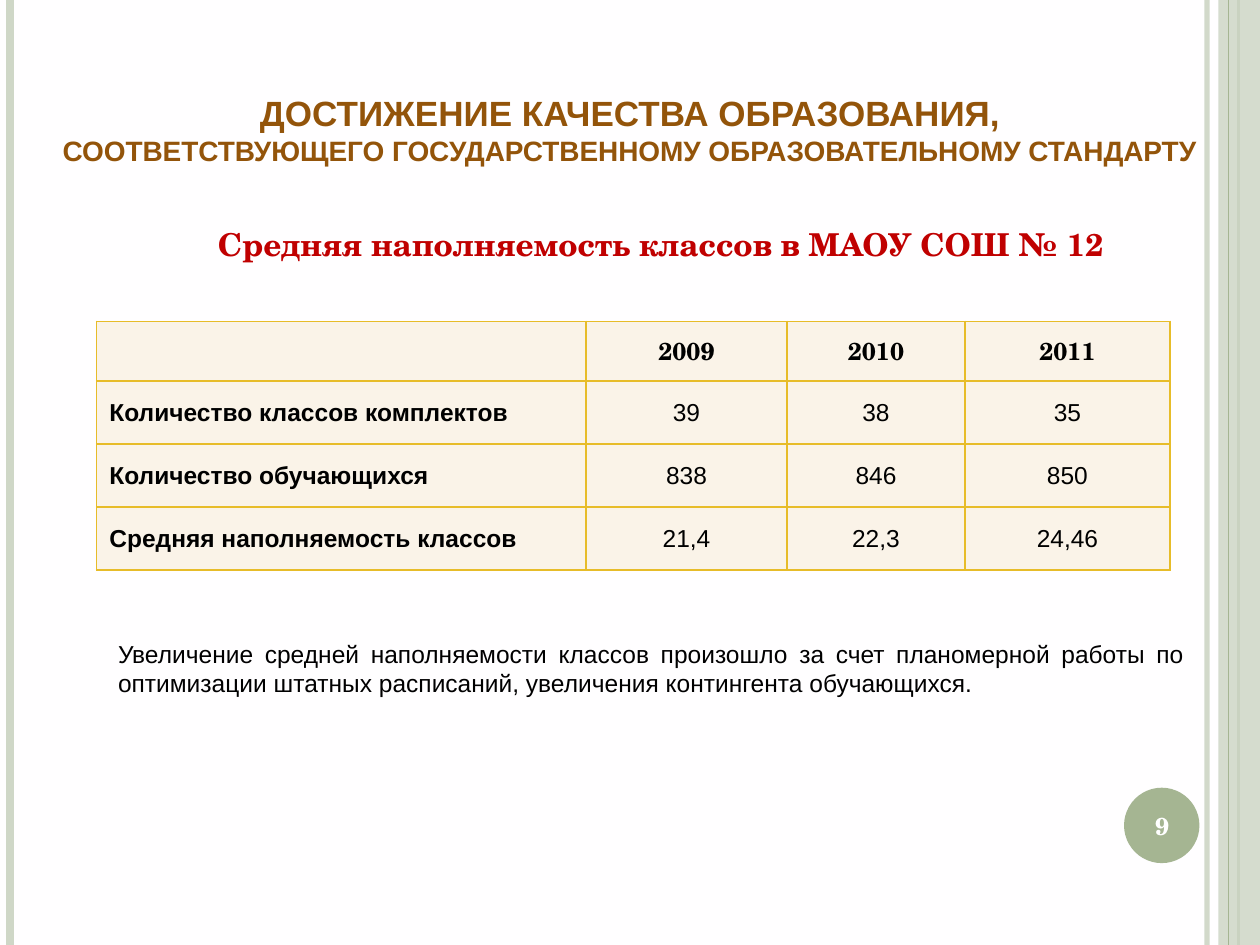
from dataclasses import dataclass

from lxml import etree
from pptx import Presentation
from pptx.dml.color import RGBColor
from pptx.enum.shapes import MSO_CONNECTOR, MSO_SHAPE
from pptx.enum.text import MSO_ANCHOR, PP_ALIGN
from pptx.oxml.ns import qn
from pptx.util import Cm, Pt

STRAIGHT = MSO_CONNECTOR.STRAIGHT
RECTANGLE, OVAL = MSO_SHAPE.RECTANGLE, MSO_SHAPE.OVAL
TOP, MIDDLE = MSO_ANCHOR.TOP, MSO_ANCHOR.MIDDLE
LEFT, CENTER, JUSTIFY = PP_ALIGN.LEFT, PP_ALIGN.CENTER, PP_ALIGN.JUSTIFY
SLIDE_WIDTH, SLIDE_HEIGHT = 25.4, 19.05


@dataclass(frozen=True)
class Theme:
    paper: str = "FFFEFF"
    pale_green: str = "CFD7C7"
    green: str = "A5B592"
    gold: str = "E7BC29"
    cream: str = "FAF3E8"
    brown: str = "93540A"
    red: str = "C00000"
    black: str = "000000"
    white: str = "FFFFFF"
    sans: str = "Arial"
    serif: str = "TeX Gyre Schola"
    title_size: float = 20
    subtitle_size: float = 16
    heading_size: float = 18
    body_size: float = 14


def set_alpha(color_parent, percent):
    color = next(color_parent.iter(qn("a:srgbClr")))
    etree.SubElement(color, qn("a:alpha")).set("val", str(percent * 1000))


class SlideBuilder:
    def __init__(self, slide, theme):
        self.slide = slide
        self.theme = theme
        background = slide.background.fill
        background.solid()
        background.fore_color.rgb = RGBColor.from_string(theme.paper)

    def style(self, para, sizes, color, font, bold=False, align=CENTER):
        """Format the paragraph, giving each run its own size in turn."""
        para.alignment = align
        for span, size in zip(para.runs, sizes):
            span.font.size = Pt(size)
            span.font.name = font
            span.font.bold = bold
            span.font.color.rgb = RGBColor.from_string(color)

    def stripe(self, x, color, width, opacity=100):
        """Draw a full-height vertical line."""
        line = self.slide.shapes.add_connector(
            STRAIGHT, Cm(x), Cm(0), Cm(x), Cm(SLIDE_HEIGHT))
        line.line.width = Pt(width)
        line.line.color.rgb = RGBColor.from_string(color)
        properties = line._element.spPr
        if opacity < 100:
            set_alpha(properties, opacity)
        etree.SubElement(properties, qn("a:effectLst"))

    def shape(self, kind, left, top, width, height, color, opacity=100):
        shape = self.slide.shapes.add_shape(
            kind, Cm(left), Cm(top), Cm(width), Cm(height))
        shape.shadow.inherit = False
        shape.line.fill.background()
        shape.fill.solid()
        shape.fill.fore_color.rgb = RGBColor.from_string(color)
        if opacity < 100:
            set_alpha(shape._element.spPr, opacity)

    def text(self, left, top, width, height, words, sizes, color, font,
             bold=False, align=CENTER, anchor=TOP, fill=None):
        box = self.slide.shapes.add_textbox(
            Cm(left), Cm(top), Cm(width), Cm(height))
        if fill:
            box.fill.solid()
            box.fill.fore_color.rgb = RGBColor.from_string(fill)
        frame = box.text_frame
        frame.word_wrap = True
        frame.vertical_anchor = anchor
        frame.text = words
        self.style(frame.paragraphs[0], sizes, color, font, bold, align)

    def border(self, cell):
        properties = cell._tc.get_or_add_tcPr()
        for side in ("lnL", "lnR", "lnT", "lnB"):
            line = etree.SubElement(properties, qn(f"a:{side}"), w=str(Pt(1)))
            fill = etree.SubElement(line, qn("a:solidFill"))
            etree.SubElement(fill, qn("a:srgbClr"), val=self.theme.gold)

    def table(self, left, top, widths, heights, rows):
        theme = self.theme
        table = self.slide.shapes.add_table(
            len(rows), len(widths), Cm(left), Cm(top),
            Cm(sum(widths)), Cm(sum(heights))).table
        table.first_row = table.horz_banding = False
        for column, width in zip(table.columns, widths):
            column.width = Cm(width)
        for r, (height, values) in enumerate(zip(heights, rows)):
            table.rows[r].height = Cm(height)
            for c, value in enumerate(values):
                cell = table.cell(r, c)
                self.border(cell)
                cell.fill.solid()
                cell.fill.fore_color.rgb = RGBColor.from_string(theme.cream)
                cell.vertical_anchor = MIDDLE
                cell.text_frame.text = value
                para = cell.text_frame.paragraphs[0]
                para.space_before = Pt(theme.body_size * 0.2)
                self.style(para, [theme.body_size], theme.black,
                           theme.sans if r else theme.serif,
                           bold=r == 0 or c == 0,
                           align=CENTER if c else LEFT)


def main():
    theme = Theme()
    deck = Presentation()
    deck.slide_width, deck.slide_height = Cm(SLIDE_WIDTH), Cm(SLIDE_HEIGHT)
    page = SlideBuilder(deck.slides.add_slide(deck.slide_layouts[6]), theme)

    page.stripe(24.33, theme.pale_green, 3, opacity=93)
    page.stripe(0.2, theme.pale_green, 4.5)
    page.stripe(24.97, theme.green, 1.5)
    page.shape(RECTANGLE, 24.56, 0, 0.84, SLIDE_HEIGHT, theme.pale_green, 87)
    page.stripe(24.77, theme.green, 0.75)

    page.shape(OVAL, 22.66, 15.88, 1.52, 1.52, theme.green)
    page.text(22.58, 15.93, 1.7, 1.45, "9", [theme.body_size], theme.white,
              theme.serif, bold=True, anchor=MIDDLE)

    page.table(1.95, 6.48, [9.86, 4.06, 3.58, 4.14], [1.2] + [1.27] * 3, [
        ["", "2009", "2010", "2011"],
        ["Количество классов комплектов", "39", "38", "35"],
        ["Количество обучающихся", "838", "846", "850"],
        ["Средняя наполняемость классов", "21,4", "22,3", "24,46"],
    ])

    page.text(1.24, 4.42, 24.16, 1.02,
              "Средняя наполняемость классов в МАОУ СОШ № 12",
              [theme.heading_size], theme.red, theme.serif, bold=True)
    page.text(2.13, 12.75, 22, 1.45,
              "Увеличение средней наполняемости классов произошло за счет "
              "планомерной работы по оптимизации штатных расписаний, "
              "увеличения контингента обучающихся.",
              [theme.body_size], theme.black, theme.sans, align=JUSTIFY,
              fill=theme.paper)
    page.text(0, 1.73, SLIDE_WIDTH, 1.8,
              "ДОСТИЖЕНИЕ КАЧЕСТВА ОБРАЗОВАНИЯ,\v"
              "СООТВЕТСТВУЮЩЕГО ГОСУДАРСТВЕННОМУ ОБРАЗОВАТЕЛЬНОМУ СТАНДАРТУ",
              [theme.title_size, theme.subtitle_size], theme.brown,
              theme.sans, bold=True)

    deck.save("out.pptx")


if __name__ == "__main__":
    main()
